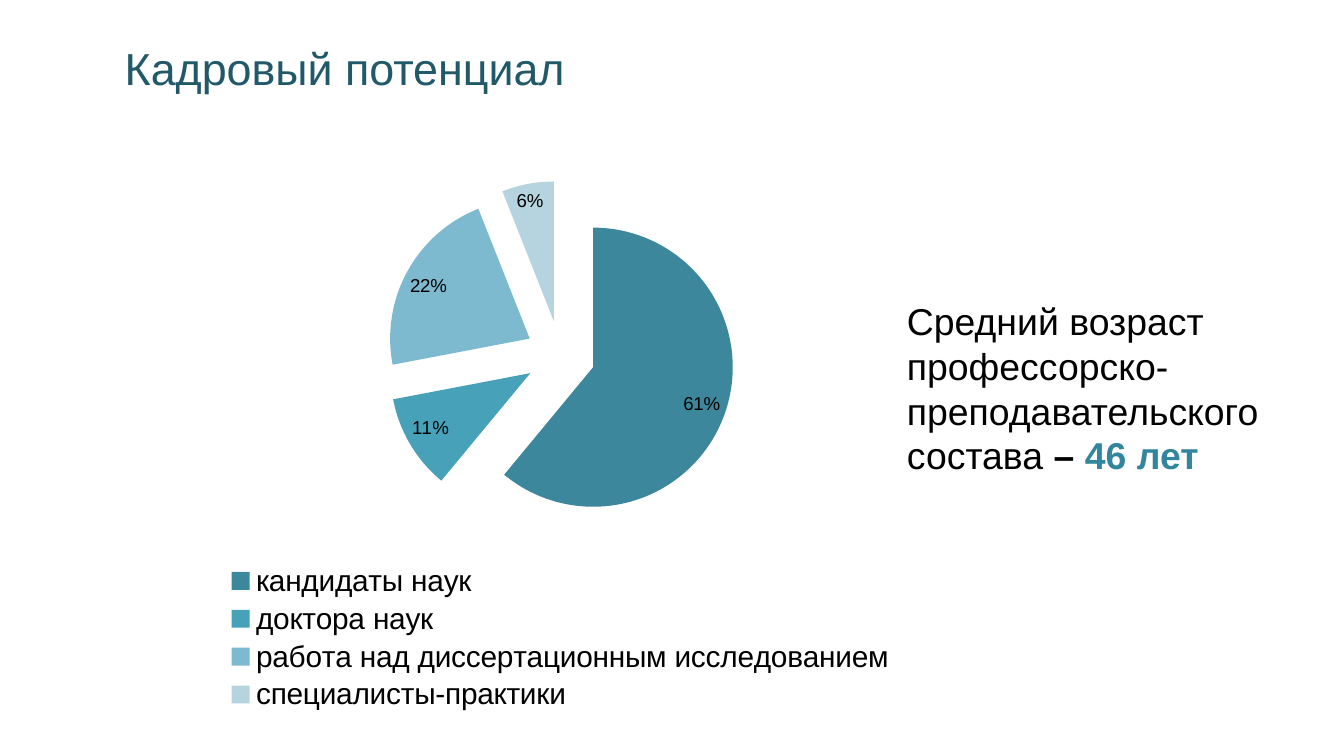
import pptx
import pptx.chart.data
import pptx.dml.color
import pptx.enum.chart
import pptx.enum.text
import pptx.oxml
import pptx.oxml.ns
import pptx.util

Inches = pptx.util.Inches
Pt = pptx.util.Pt
RGB = pptx.dml.color.RGBColor

FONT = "Arial"
BLACK = RGB(0, 0, 0)
NAVY = RGB(0x21, 0x59, 0x68)
TEAL = RGB(0x31, 0x85, 0x9C)

STAFF = [
    ("кандидаты наук", 61, RGB(0x3C, 0x87, 0x9B)),
    ("доктора наук", 11, RGB(0x46, 0xA1, 0xB9)),
    ("работа над диссертационным исследованием", 22, RGB(0x7D, 0xBA, 0xD0)),
    ("специалисты-практики", 6, RGB(0xB5, 0xD4, 0xDF)),
]


def style(font, size, color):
    font.name = FONT
    font.size = Pt(size)
    font.color.rgb = color


def add_text(slide, box, size, color, runs):
    """Add one paragraph; each run is (text, bold, own colour or None)."""
    frame = slide.shapes.add_textbox(*map(Inches, box)).text_frame
    frame.word_wrap = True
    frame.vertical_anchor = pptx.enum.text.MSO_ANCHOR.MIDDLE
    para = frame.paragraphs[0]
    style(para.font, size, color)
    for text, bold, tint in runs:
        run = para.add_run()
        run.text = text
        if bold:
            run.font.bold = True
        if tint is not None:
            run.font.color.rgb = tint


def make_node(tag, inner="", val=None):
    attr = "" if val is None else f' val="{val}"'
    space = pptx.oxml.ns.nsdecls("c")
    return pptx.oxml.parse_xml(f"<c:{tag} {space}{attr}>{inner}</c:{tag}>")


def place(parent, index, box, target=""):
    """Fix a chart part at x, y, w, h, as shares of the chart."""
    for old in parent.findall(pptx.oxml.ns.qn("c:layout")):
        parent.remove(old)
    modes = '<c:xMode val="edge"/><c:yMode val="edge"/>'
    sizes = "".join(f'<c:{key} val="{val}"/>' for key, val in zip("xywh", box))
    inner = f"<c:manualLayout>{target}{modes}{sizes}</c:manualLayout>"
    parent.insert(index, make_node("layout", inner))


def add_pie(slide, box):
    data = pptx.chart.data.CategoryChartData()
    data.categories = [name for name, _, _ in STAFF]
    data.add_series("Series 1", [share for _, share, _ in STAFF])
    kind = pptx.enum.chart.XL_CHART_TYPE.PIE
    chart = slide.shapes.add_chart(kind, *map(Inches, box), data).chart
    chart.has_title = False
    style(chart.font, 10, BLACK)

    chart.has_legend = True
    legend = chart.legend
    legend.position = pptx.enum.chart.XL_LEGEND_POSITION.BOTTOM
    legend.include_in_layout = False
    style(legend.font, 16, BLACK)

    plot = chart.plots[0]
    plot.vary_by_categories = True
    series = plot.series[0]
    for index, (_, _, color) in enumerate(STAFF):
        fill = series.points[index].format.fill
        fill.solid()
        fill.fore_color.rgb = color
    first = series._element.find(pptx.oxml.ns.qn("c:dPt"))
    first.addprevious(make_node("explosion", val=25))

    plot.has_data_labels = True
    labels = plot.data_labels
    labels.show_value = False
    labels.show_percentage = True
    labels.number_format = "0%"
    labels.number_format_is_linked = False
    labels.position = pptx.enum.chart.XL_LABEL_POSITION.BEST_FIT
    style(labels.font, 10, BLACK)

    area = chart._chartSpace.chart.plotArea
    place(area, 0, (0.32, 0.08, 0.36, 0.6), '<c:layoutTarget val="inner"/>')
    place(legend._element, 1, (0.17, 0.73, 0.66, 0.27))


def main():
    deck = pptx.Presentation()
    deck.slide_width = Inches(10)
    deck.slide_height = Inches(10 * 9 / 16)
    slide = deck.slides.add_slide(deck.slide_layouts[6])
    add_text(slide, (0.83, 0.23, 8.67, 0.54), 24, NAVY,
             [("Кадровый потенциал", False, None)])
    add_pie(slide, (0.43, 1, 7.48, 4.33))
    add_text(slide, (6.65, 2.16, 3.07, 1.45), 20, BLACK, [
        ("Средний возраст профессорско-преподавательского состава ", False, None),
        ("– ", True, None),
        ("46 лет", True, TEAL),
    ])
    deck.save("out.pptx")


if __name__ == "__main__":
    main()
